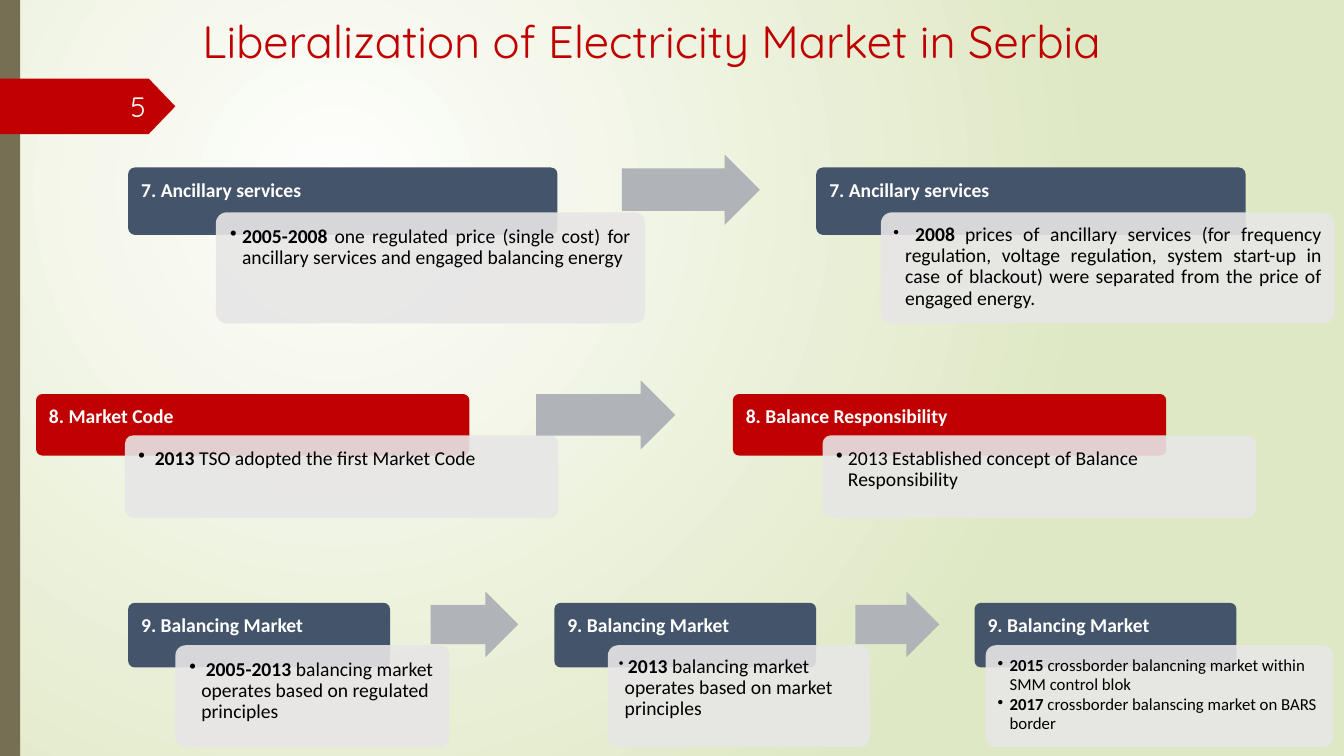
"""Build the slide on electricity market liberalization in Serbia."""
from dataclasses import dataclass

import lxml.etree
import pptx
import pptx.dml.color
import pptx.enum.shapes
import pptx.enum.text
import pptx.oxml.ns
import pptx.util

Cm = pptx.util.Cm
Pt = pptx.util.Pt
RGBColor = pptx.dml.color.RGBColor
SHAPE = pptx.enum.shapes.MSO_SHAPE
ALIGN = pptx.enum.text.PP_ALIGN
ANCHOR = pptx.enum.text.MSO_ANCHOR
qn = pptx.oxml.ns.qn

RED = RGBColor(0xC0, 0x00, 0x00)
SLATE = RGBColor(0x44, 0x54, 0x6A)
ARROW_GREY = RGBColor(0xB0, 0xB4, 0xB9)
PANEL_GREY = RGBColor(0xE7, 0xE6, 0xE6)
STRIPE_BROWN = RGBColor(0x76, 0x6F, 0x54)
GLOW = RGBColor(0xFE, 0xFE, 0xFD)
PALE_GREEN = RGBColor(0xDF, 0xE8, 0xC4)
WHITE = RGBColor(0xFF, 0xFF, 0xFF)
BLACK = RGBColor(0x00, 0x00, 0x00)

BODY_FONT = {"name": "Calibri", "size": Pt(14), "bold": False}
HEADER_FONT = {"name": "Calibri", "size": Pt(14), "bold": True}
TITLE_FONT = {"name": "Quicksand", "size": Pt(32.4), "bold": False}
NUMBER_FONT = {"name": "Quicksand", "size": Pt(20), "bold": False}
STRONG = {"bold": True}
PLAIN = {}
SMALL = {"size": Pt(12)}
SMALL_STRONG = {"size": Pt(12), "bold": True}
TINY = {"size": Pt(10)}


@dataclass
class Card:
    """A header with a panel of bulleted points; lengths in centimetres."""
    header_left: float
    panel_left: float
    panel_width: float
    topic: str
    points: list
    padding: float = 0.28
    indent: float = 0.3
    align: ALIGN = ALIGN.LEFT


@dataclass
class Stage:
    """A row of cards joined by arrows; lengths in centimetres."""
    colour: RGBColor
    header_top: float
    header_width: float
    header_height: float
    panel_top: float
    panel_height: float
    arrow_top: float
    arrow_height: float
    arrows: list
    cards: list


STAGES = [
    Stage(SLATE, 15.19, 6.6, 1.63, 16.26, 2.57, 14.91, 1.65,
          [(10.85, 2.21), (21.56, 2.11)], [
              Card(3.23, 4.42, 6.91, "9. Balancing Market", [
                  [(" ", PLAIN), ("2005-2013", STRONG),
                   (" balancing market operates based on regulated principles", PLAIN)]]),
              Card(13.97, 15.32, 6.6, "9. Balancing Market", [
                  [(" ", TINY), ("2013 ", STRONG),
                   ("balancing market operates based on market principles", PLAIN)]],
                   padding=0.2, indent=0.15),
              Card(24.56, 24.84, 8.76, "9. Balancing Market", [
                  [("2015 ", SMALL_STRONG),
                   ("crossborder balancning market within SMM control blok", SMALL)],
                  [("2017", SMALL_STRONG),
                   (" crossborder balanscing market on BARS border", SMALL)]],
                   padding=0.23)]),
    Stage(SLATE, 4.22, 10.82, 1.7, 5.35, 2.8, 3.89, 1.78,
          [(15.67, 3.48)], [
              Card(3.23, 5.44, 10.82, "7. Ancillary services", [
                  [("2005-2008", STRONG), (" ", SMALL),
                   ("one regulated price (single cost) for ancillary services "
                    "and engaged balancing energy", PLAIN)]],
                   align=ALIGN.JUSTIFY),
              Card(20.57, 22.2, 11.43, "7. Ancillary services", [
                  [(" ", SMALL_STRONG), ("2008", STRONG), (" ", SMALL_STRONG),
                   ("prices of ancillary services (for frequency regulation, voltage "
                    "regulation, system start-up in case of blackout) were separated "
                    "from the price of engaged energy.", PLAIN)]],
                   padding=0.23, align=ALIGN.JUSTIFY)]),
    Stage(RED, 9.93, 10.92, 1.55, 10.97, 2.08, 9.58, 1.75,
          [(13.51, 3.51)], [
              Card(0.91, 3.15, 10.92, "8. Market Code", [
                  [(" ", PLAIN), ("2013 ", STRONG),
                   ("TSO adopted the first Market Code", PLAIN)]]),
              Card(18.47, 20.73, 10.92, "8. Balance Responsibility", [
                  [("2013 Established concept of Balance Responsibility", PLAIN)]])]),
]


def apply_format(target, values):
    """Set every attribute named in a dict of format values."""
    for attribute, value in values.items():
        setattr(target, attribute, value)


def add_run(paragraph, text, font_values, colour):
    """Append a formatted run to a paragraph."""
    run = paragraph.add_run()
    run.text = text
    apply_format(run.font, font_values)
    run.font.color.rgb = colour


def set_frame(frame, anchor, margins):
    """Wrap a text frame and set its anchor and margins in centimetres."""
    sides = ("margin_left", "margin_top", "margin_right", "margin_bottom")
    apply_format(frame, {
        "word_wrap": True,
        "auto_size": pptx.enum.text.MSO_AUTO_SIZE.NONE,
        "vertical_anchor": anchor,
        **{side: Cm(margin) for side, margin in zip(sides, margins)},
    })


def add_block(slide, preset, box, colour, adjustments=()):
    """Add a flat preset shape without outline."""
    block = slide.shapes.add_shape(preset, *map(Cm, box))
    block.shadow.inherit = False
    block.fill.solid()
    block.fill.fore_color.rgb = colour
    block.line.fill.background()
    for index, value in enumerate(adjustments):
        block.adjustments[index] = value
    return block


def set_bullet(paragraph, indent):
    """Give a paragraph a round bullet with a hanging indent."""
    properties = paragraph._p.get_or_add_pPr()
    properties.set("marL", str(Cm(indent)))
    properties.set("indent", str(-Cm(indent)))
    lxml.etree.SubElement(properties, qn("a:buChar")).set("char", "•")


def add_card(slide, stage, card):
    """Add a header and the translucent panel that overlaps it."""
    header = add_block(slide, SHAPE.ROUNDED_RECTANGLE,
                       (card.header_left, stage.header_top,
                        stage.header_width, stage.header_height),
                       stage.colour, (0.1,))
    set_frame(header.text_frame, ANCHOR.TOP, (0.28, 0.28, 0.28, 0.15))
    topic = header.text_frame.paragraphs[0]
    apply_format(topic, {"alignment": ALIGN.LEFT, "line_spacing": 0.9})
    add_run(topic, card.topic, HEADER_FONT, WHITE)

    panel = add_block(slide, SHAPE.ROUNDED_RECTANGLE,
                      (card.panel_left, stage.panel_top,
                       card.panel_width, stage.panel_height),
                      PANEL_GREY, (0.1,))
    tint = panel._element.spPr.find(qn("a:solidFill"))[0]
    lxml.etree.SubElement(tint, qn("a:alpha")).set("val", "90000")
    frame = panel.text_frame
    set_frame(frame, ANCHOR.TOP, [card.padding] * 4)
    for index, point in enumerate(card.points):
        paragraph = frame.add_paragraph() if index else frame.paragraphs[0]
        apply_format(paragraph, {"alignment": card.align, "line_spacing": 0.9,
                                 "space_after": Pt(2)})
        set_bullet(paragraph, card.indent)
        for text, changes in point:
            add_run(paragraph, text, {**BODY_FONT, **changes}, BLACK)


def add_stage(slide, stage):
    """Add the cards and arrows of one row."""
    for card in stage.cards:
        add_card(slide, stage, card)
    for left, width in stage.arrows:
        add_block(slide, SHAPE.RIGHT_ARROW,
                  (left, stage.arrow_top, width, stage.arrow_height),
                  ARROW_GREY, (0.6, 0.5))


def set_background(slide):
    """Fill the background with a radial glow from the upper left."""
    fill = slide.background.fill
    fill.gradient()
    for stop, colour in zip(fill.gradient_stops, (GLOW, PALE_GREEN)):
        stop.color.rgb = colour
    gradient = slide._element.find(".//" + qn("a:gradFill"))
    gradient.remove(gradient.find(qn("a:lin")))
    glow = lxml.etree.SubElement(gradient, qn("a:path"), {"path": "circle"})
    lxml.etree.SubElement(glow, qn("a:fillToRect"),
                          {"l": "50000", "t": "50000", "r": "100000", "b": "100000"})


def add_title(slide, text):
    """Place and format the title placeholder."""
    title = slide.shapes.title
    apply_format(title, {"left": Cm(4.85), "top": Cm(0.2),
                         "width": Cm(27.43), "height": Cm(1.47)})
    set_frame(title.text_frame, ANCHOR.TOP, (0.25, 0.13, 0.25, 0.13))
    heading = title.text_frame.paragraphs[0]
    heading.alignment = ALIGN.LEFT
    add_run(heading, text, TITLE_FONT, RED)


def add_page_flag(slide, number):
    """Add the side stripe and the flag with the page number."""
    add_block(slide, SHAPE.RECTANGLE, (0, 0, 0.51, 19.05), STRIPE_BROWN)
    flag = add_block(slide, SHAPE.PENTAGON, (0, 1.98, 4.42, 1.4), RED, (0.48,))
    set_frame(flag.text_frame, ANCHOR.MIDDLE, (0.25, 0.13, 0.4, 0.13))
    label = flag.text_frame.paragraphs[0]
    label.alignment = ALIGN.RIGHT
    add_run(label, number, NUMBER_FONT, WHITE)


def main():
    """Assemble and save the slide."""
    deck = pptx.Presentation()
    apply_format(deck, {"slide_width": Cm(33.87), "slide_height": Cm(19.05)})
    slide = deck.slides.add_slide(deck.slide_layouts[5])
    set_background(slide)
    add_page_flag(slide, "5")
    add_title(slide, "Liberalization of Electricity Market in Serbia")
    for stage in STAGES:
        add_stage(slide, stage)
    deck.save("out.pptx")


if __name__ == "__main__":
    main()
